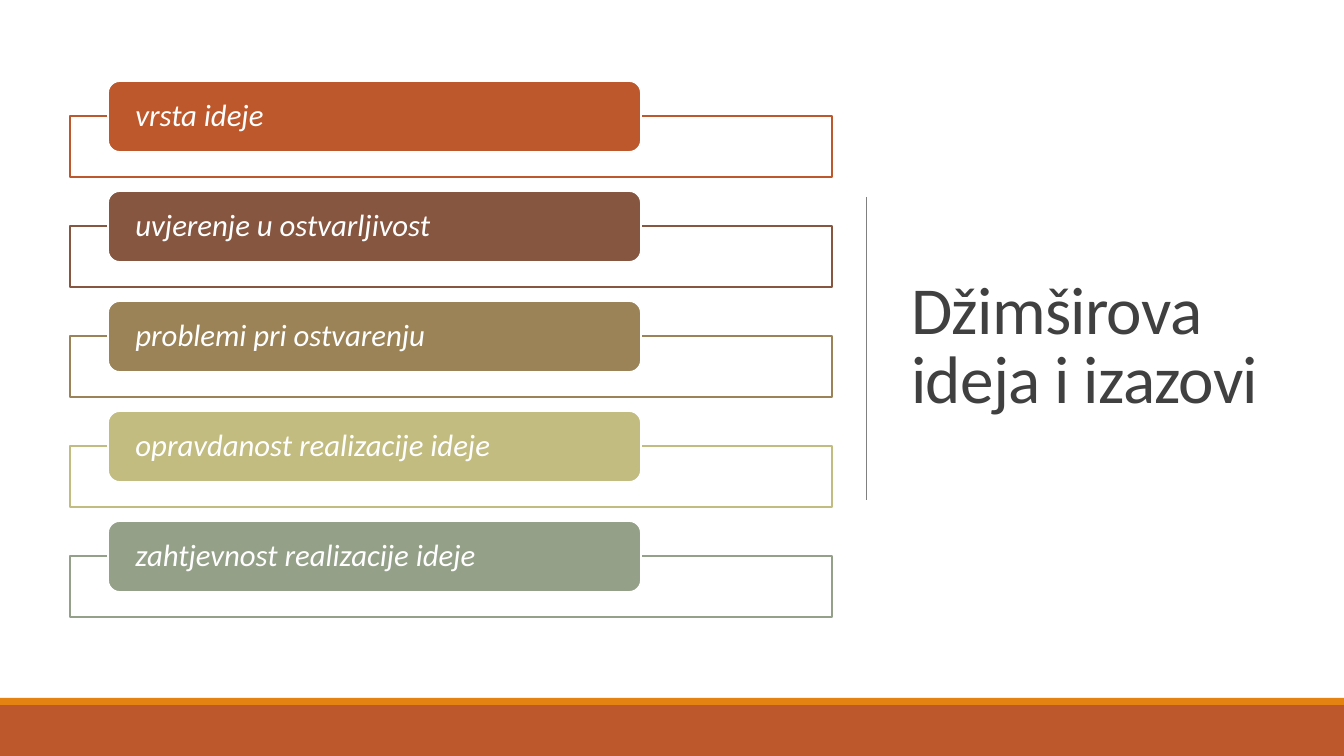
import pptx
import pptx.util
from pptx.dml.color import RGBColor
from pptx.enum.shapes import MSO_CONNECTOR, MSO_SHAPE
from pptx.enum.text import MSO_ANCHOR, MSO_AUTO_SIZE, PP_ALIGN
from pptx.oxml.ns import qn
from lxml import etree

TITLE = "Džimširova ideja i izazovi"
CHALLENGES = [
    ("vrsta ideje", "BD582C"),
    ("uvjerenje u ostvarljivost", "865640"),
    ("problemi pri ostvarenju", "9B8357"),
    ("opravdanost realizacije ideje", "C2BC80"),
    ("zahtjevnost realizacije ideje", "94A088"),
]
THEME = {
    "font": "Calibri", "title_size": 48, "item_size": 22,
    "white": "FFFFFF", "title": "404040", "divider": "808080",
    "stripe": "E48312", "footer": "BD582C",
}
WIDTH, HEIGHT = 1344, 756
FRAME = (70, 116, 762, 61)
PILL = (108, 81, 533, 71)
PITCH = 110
PILL_INSET = 24
FOOTER_TOP, STRIPE_HEIGHT = 698, 7


def px(n):
    return round(n * 914400 / 100.8)


def rgb(name):
    return RGBColor.from_string(THEME.get(name, name))


def add_box(s, kind, box, fill, line=None):
    sp = s.shapes.add_shape(kind, *map(px, box))
    sp.shadow.inherit = False
    sp.fill.solid()
    sp.fill.fore_color.rgb = rgb(fill)
    if line:
        sp.line.color.rgb = rgb(line)
        sp.line.width = pptx.util.Pt(1.25)
    else:
        sp.line.fill.background()
    return sp


def set_text(sp, text, *, size, color, spacing, inset, italic=False, tracking=0):
    tf = sp.text_frame
    tf.word_wrap = True
    tf.auto_size = MSO_AUTO_SIZE.NONE
    tf.vertical_anchor = MSO_ANCHOR.MIDDLE
    tf.margin_left = tf.margin_right = px(inset)
    tf.margin_top = tf.margin_bottom = 0
    p = tf.paragraphs[0]
    p.alignment = PP_ALIGN.LEFT
    p.line_spacing = spacing
    r = p.add_run()
    r.text = text
    r.font.name = THEME["font"]
    r.font.size = pptx.util.Pt(THEME[size])
    r.font.italic = italic
    r.font.color.rgb = rgb(color)
    if tracking:
        r.font._element.set("spc", str(tracking))


def add_divider(s, x, top, bottom):
    ln = s.shapes.add_connector(MSO_CONNECTOR.STRAIGHT, px(x), px(top), px(x), px(bottom))
    ln.line.color.rgb = rgb("divider")
    ln.line.width = pptx.util.Pt(0.5)
    etree.SubElement(ln._element.spPr, qn("a:effectLst"))


def add_challenge(s, row, text, color):
    frame, pill = ((x, y + row * PITCH, w, h) for x, y, w, h in (FRAME, PILL))
    add_box(s, MSO_SHAPE.RECTANGLE, frame, "white", color)
    sp = add_box(s, MSO_SHAPE.ROUNDED_RECTANGLE, pill, color, "white")
    set_text(sp, text, size="item_size", color="white", spacing=0.9,
             inset=PILL_INSET, italic=True)


def main():
    prs = pptx.Presentation()
    prs.slide_width, prs.slide_height = px(WIDTH), px(HEIGHT)
    s = prs.slides.add_slide(prs.slide_layouts[5])

    title = s.shapes.title
    title.left, title.top, title.width, title.height = map(px, (901, 70, 372, 557))
    set_text(title, TITLE, size="title_size", color="title", spacing=0.85,
             inset=10, tracking=-50)

    add_divider(s, 866, 197, 500)
    footer_top = FOOTER_TOP + STRIPE_HEIGHT
    add_box(s, MSO_SHAPE.RECTANGLE, (0, FOOTER_TOP, WIDTH, STRIPE_HEIGHT), "stripe")
    add_box(s, MSO_SHAPE.RECTANGLE, (0, footer_top, WIDTH, HEIGHT - footer_top), "footer")

    for row, (text, color) in enumerate(CHALLENGES):
        add_challenge(s, row, text, color)
    prs.save("out.pptx")


if __name__ == "__main__":
    main()
